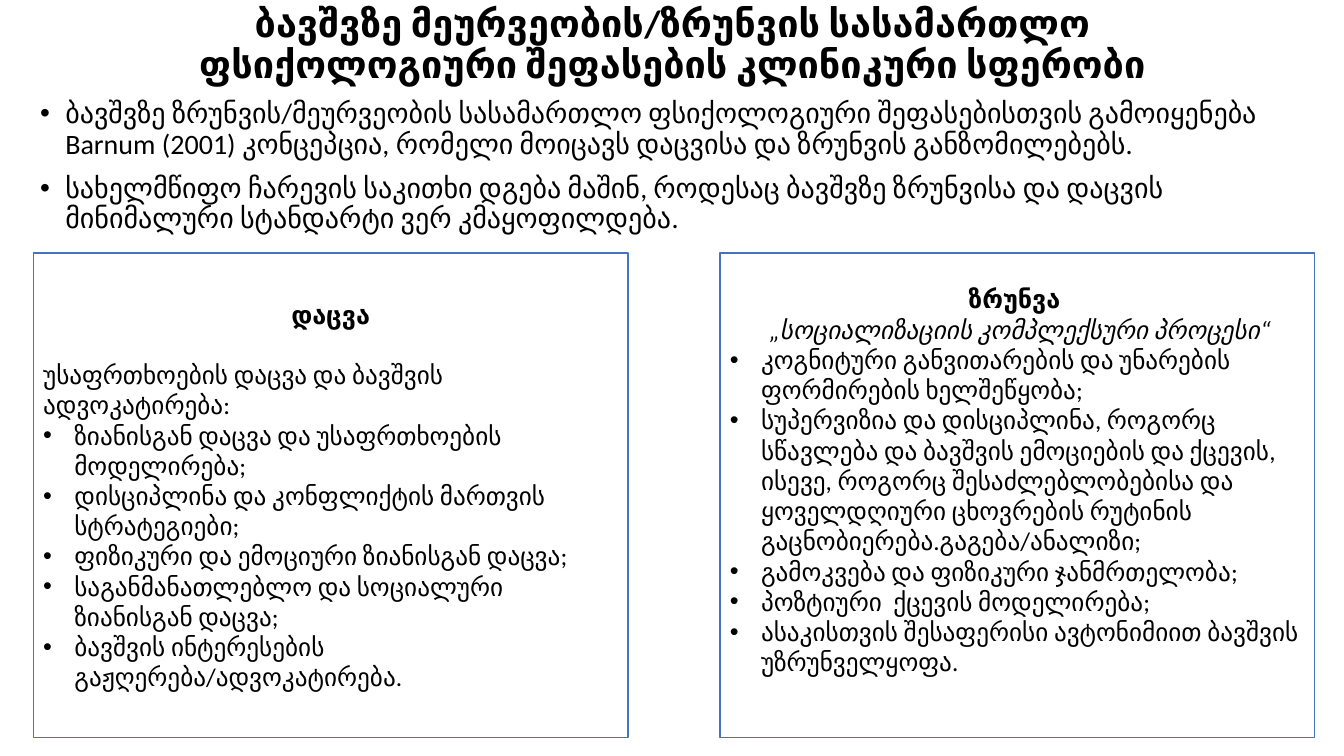
"""Build the slide on clinical areas of child custody assessment."""
from lxml.etree import SubElement
from pptx import Presentation
from pptx.dml.color import RGBColor
from pptx.enum.shapes import MSO_SHAPE
from pptx.enum.text import MSO_ANCHOR, PP_ALIGN
from pptx.oxml.ns import qn
from pptx.util import Inches, Pt

COLORS = {"text": "000000", "card": "FFFFFF", "border": "4472C4"}
FONT = "Calibri"
TITLE = "ბავშვზე მეურვეობის/ზრუნვის სასამართლო ფსიქოლოგიური შეფასების კლინიკური სფერობი"
INTRO = [
    "ბავშვზე ზრუნვის/მეურვეობის სასამართლო ფსიქოლოგიური შეფასებისთვის გამოიყენება Barnum (2001) კონცეპცია, რომელი მოიცავს დაცვისა და ზრუნვის განზომილებებს.",
    "სახელმწიფო ჩარევის საკითხი დგება მაშინ, როდესაც ბავშვზე ზრუნვისა და დაცვის მინიმალური სტანდარტი ვერ კმაყოფილდება.",
]
CARDS = [
    {
        "heading": "დაცვა",
        "heading_gap": 21.6,
        "lead": "უსაფრთხოების დაცვა და ბავშვის ადვოკატირება:",
        "lead_style": {"align": PP_ALIGN.LEFT},
        "bottom_inset": 0.05,
        "points": [
            "ზიანისგან დაცვა და უსაფრთხოების მოდელირება;",
            "დისციპლინა და კონფლიქტის მართვის სტრატეგიები;",
            "ფიზიკური და ემოციური ზიანისგან დაცვა;",
            "საგანმანათლებლო და სოციალური ზიანისგან დაცვა;",
            "ბავშვის ინტერესების გაჟღერება/ადვოკატირება.",
        ],
    },
    {
        "heading": "ზრუნვა ",
        "heading_gap": 0,
        "lead": " „სოციალიზაციის კომპლექსური პროცესი“",
        "lead_style": {"align": PP_ALIGN.CENTER, "italic": True},
        "bottom_inset": 0.35,
        "points": [
            "კოგნიტური განვითარების და უნარების ფორმირების ხელშეწყობა;",
            "სუპერვიზია და დისციპლინა, როგორც სწავლება და ბავშვის ემოციების და ქცევის, ისევე, როგორც შესაძლებლობებისა და ყოველდღიური ცხოვრების რუტინის გაცნობიერება.გაგება/ანალიზი;",
            "გამოკვება და ფიზიკური ჯანმრთელობა;",
            "პოზტიური  ქცევის მოდელირება;",
            "ასაკისთვის შესაფერისი ავტონიმიით ბავშვის უზრუნველყოფა.",
        ],
    },
]
WIDTH, HEIGHT = 13.33, 7.5
CARD_LEFT, CARD_TOP, CARD_WIDTH, CARD_HEIGHT = 0.33, 2.51, 5.9, 4.81
CARD_PITCH = 6.81


def add_line(frame, text, size, align=PP_ALIGN.LEFT, bold=False, italic=False,
             indent=0, spacing=1.0, before=0, after=0):
    first = frame.paragraphs[0]
    line = frame.add_paragraph() if first.runs else first
    line.add_run().text = text
    line.alignment = align
    line.line_spacing = spacing
    line.space_before, line.space_after = Pt(before), Pt(after)
    line.font.name, line.font.size = FONT, Pt(size)
    line.font.bold, line.font.italic = bold, italic
    line.font.color.rgb = RGBColor.from_string(COLORS["text"])
    if indent:
        props = line._p.get_or_add_pPr()
        props.set("marL", str(Inches(indent)))
        props.set("indent", str(-Inches(indent)))
        bullet_font = SubElement(props, qn("a:buFont"))
        bullet_font.set("typeface", "Arial")
        SubElement(props, qn("a:buChar")).set("char", "•")
        props.append(props.find(qn("a:defRPr")))


def add_frame(slide, left, top, width, height, anchor):
    box = slide.shapes.add_textbox(*map(Inches, (left, top, width, height)))
    box.text_frame.word_wrap = True
    box.text_frame.vertical_anchor = anchor
    return box.text_frame


def add_card(slide, column, content):
    card = slide.shapes.add_shape(
        MSO_SHAPE.RECTANGLE, Inches(CARD_LEFT + column * CARD_PITCH),
        Inches(CARD_TOP), Inches(CARD_WIDTH), Inches(CARD_HEIGHT))
    card.shadow.inherit = False
    card.fill.solid()
    card.fill.fore_color.rgb = RGBColor.from_string(COLORS["card"])
    card.line.color.rgb = RGBColor.from_string(COLORS["border"])
    card.line.width = Pt(1)
    frame = card.text_frame
    frame.word_wrap = True
    frame.vertical_anchor = MSO_ANCHOR.MIDDLE
    frame.margin_bottom = Inches(content["bottom_inset"])
    add_line(frame, content["heading"], 18, PP_ALIGN.CENTER, bold=True,
             after=content["heading_gap"])
    add_line(frame, content["lead"], 18, **content["lead_style"])
    for point in content["points"]:
        add_line(frame, point, 18, indent=0.31)


def main():
    deck = Presentation()
    deck.slide_width, deck.slide_height = Inches(WIDTH), Inches(HEIGHT)
    slide = deck.slides.add_slide(deck.slide_layouts[6])
    title = add_frame(slide, 0.92, 0.15, 11.5, 0.6, MSO_ANCHOR.MIDDLE)
    add_line(title, TITLE, 27, PP_ALIGN.CENTER, bold=True, spacing=0.9)
    intro = add_frame(slide, 0.3, 0.94, 12.43, 6.37, MSO_ANCHOR.TOP)
    for statement in INTRO:
        add_line(intro, statement, 20, indent=0.25, spacing=0.9, before=10)
    for column, content in enumerate(CARDS):
        add_card(slide, column, content)
    deck.save("out.pptx")


if __name__ == "__main__":
    main()
